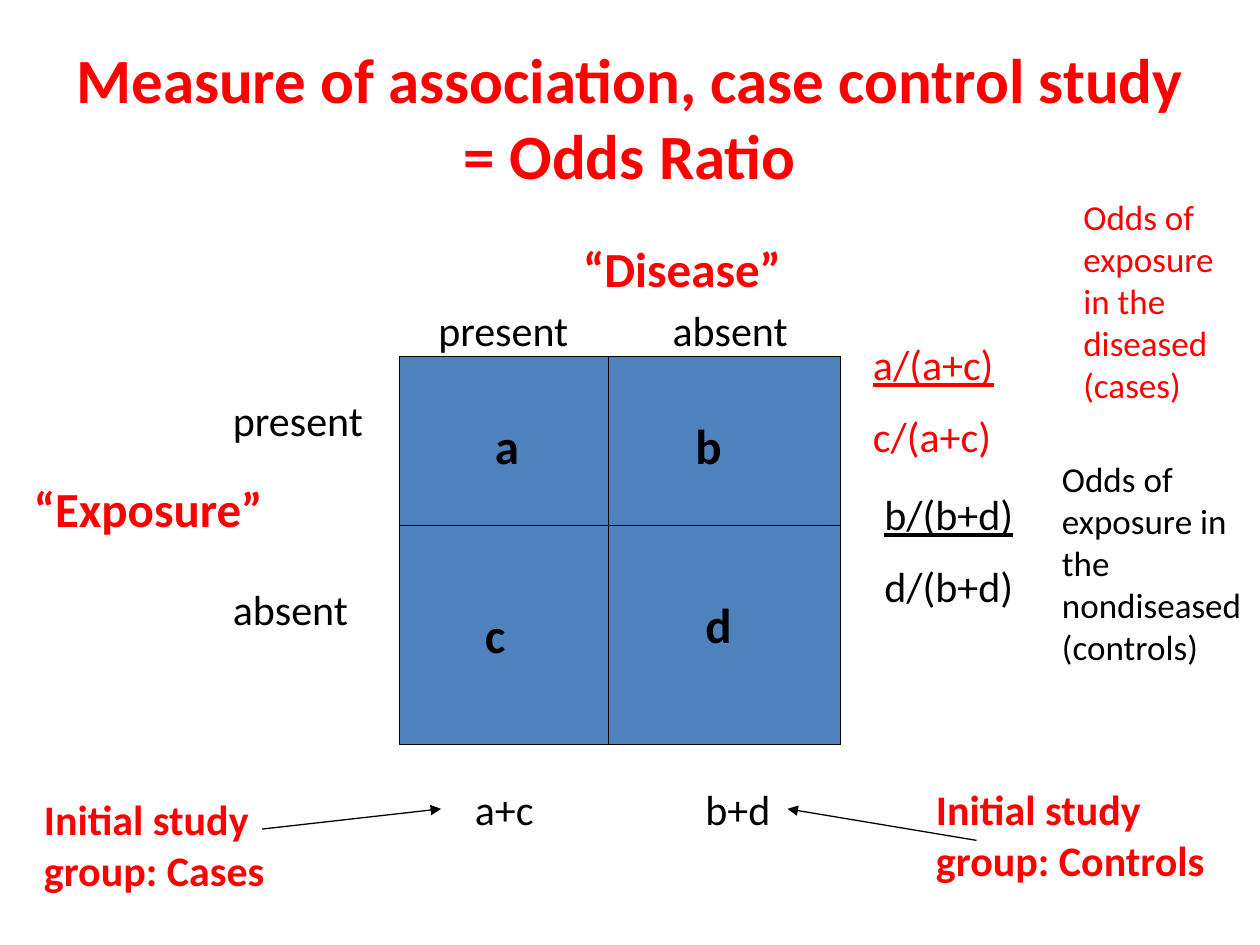
from pptx import Presentation
from pptx.dml.color import RGBColor
from pptx.enum.shapes import MSO_CONNECTOR, MSO_SHAPE
from pptx.enum.text import MSO_ANCHOR, PP_ALIGN
from pptx.oxml.ns import qn
from pptx.util import Inches, Pt
from lxml.etree import SubElement

RED = RGBColor(0xFF, 0, 0)
BLACK = RGBColor(0, 0, 0)
BLUE = RGBColor(0x4F, 0x81, 0xBD)
FONT = "Calibri"

TITLE = ("Measure of association, case control study = Odds Ratio", 0.5, 0.3, 9, 1.25)

# Text groups: (size, colour, bold) and their (text, left, top, width, height)
LABEL_GROUPS = [
    ((28, RED, True), [
        ("“Disease”", 4.53, 1.84, 2.17, 0.57),
        ("“Exposure”", 0.17, 3.75, 2.17, 0.57),
    ]),
    ((24, BLACK, False), [
        ("present", 3.38, 2.37, 1.25, 0.5),
        ("absent", 5.24, 2.37, 1.25, 0.5),
        ("present", 1.75, 3.08, 1.25, 0.5),
        ("absent", 1.75, 4.58, 1.25, 0.5),
        ("a+c", 3.67, 6.17, 1, 0.5),
        ("b+d", 5.5, 6.17, 0.92, 0.5),
    ]),
    ((28, BLACK, True), [
        ("a", 3.83, 3.25, 0.67, 0.57),
        ("b", 5.42, 3.25, 0.75, 0.57),
        ("c", 3.75, 4.75, 0.75, 0.57),
        ("d", 5.5, 4.67, 0.67, 0.57),
    ]),
    ((24, RED, True), [
        ("Initial study group: Cases", 0.25, 6.25, 2.5, 0.91),
        ("Initial study group: Controls", 7.33, 6.17, 2.42, 0.91),
    ]),
    ((20, RED, False), [
        ("Odds of exposure in the diseased (cases)", 8.5, 1.5, 1.33, 1.78),
    ]),
    ((20, BLACK, False), [
        ("Odds of exposure in the nondiseased (controls)", 8.33, 3.58, 1.67, 1.78),
    ]),
]

# Odds as fractions: numerator, denominator, left, top, colour
FRACTIONS = [
    ("a/(a+c)", "c/(a+c)", 6.83, 2.64, RED),
    ("b/(b+d)", "d/(b+d)", 6.92, 3.83, BLACK),
]

# Two-by-two grid and the arrows to its column totals
LEFT, TOP, WIDTH, HEIGHT = 3.17, 2.83, 3.5, 3.08
COLUMN_SPLIT, ROW_SPLIT = 4.83, 4.17
DIVIDERS = [
    (COLUMN_SPLIT, TOP, COLUMN_SPLIT, TOP + HEIGHT),
    (LEFT, ROW_SPLIT, LEFT + WIDTH, ROW_SPLIT),
]
ARROWS = [(2.08, 6.58, 3.5, 6.42), (7.75, 6.67, 6.25, 6.42)]


def add_text(page, lines, area, size, colour, bold=False, underline_first=False):
    box = page.shapes.add_textbox(*map(Inches, area))
    frame = box.text_frame
    frame.word_wrap = True
    for index, line in enumerate(lines):
        para = frame.paragraphs[0] if index == 0 else frame.add_paragraph()
        if index:
            para.space_before = Pt(size / 2)
        span = para.add_run()
        span.text = line
        font = span.font
        font.name, font.size, font.bold = FONT, Pt(size), bold
        font.color.rgb = colour
        if underline_first and index == 0:
            font.underline = True
    return frame


def add_line(page, ends, arrow=False):
    line = page.shapes.add_connector(MSO_CONNECTOR.STRAIGHT, *map(Inches, ends))
    line.line.color.rgb = BLACK
    line.line.width = Pt(0.75)
    if arrow:
        SubElement(line.line._get_or_add_ln(), qn("a:tailEnd"), type="triangle")
    SubElement(line._element.spPr, qn("a:effectLst"))


def main():
    deck = Presentation()
    deck.slide_width, deck.slide_height = Inches(10), Inches(7.5)
    page = deck.slides.add_slide(deck.slide_layouts[6])

    # Title
    text, *area = TITLE
    frame = add_text(page, [text], area, 36, RED, bold=True)
    frame.vertical_anchor = MSO_ANCHOR.MIDDLE
    frame.paragraphs[0].alignment = PP_ALIGN.CENTER

    # Grid
    grid = page.shapes.add_shape(
        MSO_SHAPE.RECTANGLE, *map(Inches, (LEFT, TOP, WIDTH, HEIGHT)))
    grid.shadow.inherit = False
    grid.fill.solid()
    grid.fill.fore_color.rgb = BLUE
    grid.line.color.rgb = BLACK
    grid.line.width = Pt(0.75)
    for ends in DIVIDERS:
        add_line(page, ends)

    # Arrows
    for ends in ARROWS:
        add_line(page, ends, arrow=True)

    # Labels
    for style, labels in LABEL_GROUPS:
        for text, *area in labels:
            add_text(page, [text], area, *style)

    # Odds fractions
    for top_term, bottom_term, left, top, colour in FRACTIONS:
        add_text(page, [top_term, bottom_term], (left, top, 1.25, 1.11),
                 24, colour, underline_first=True)

    deck.save("out.pptx")


if __name__ == "__main__":
    main()
